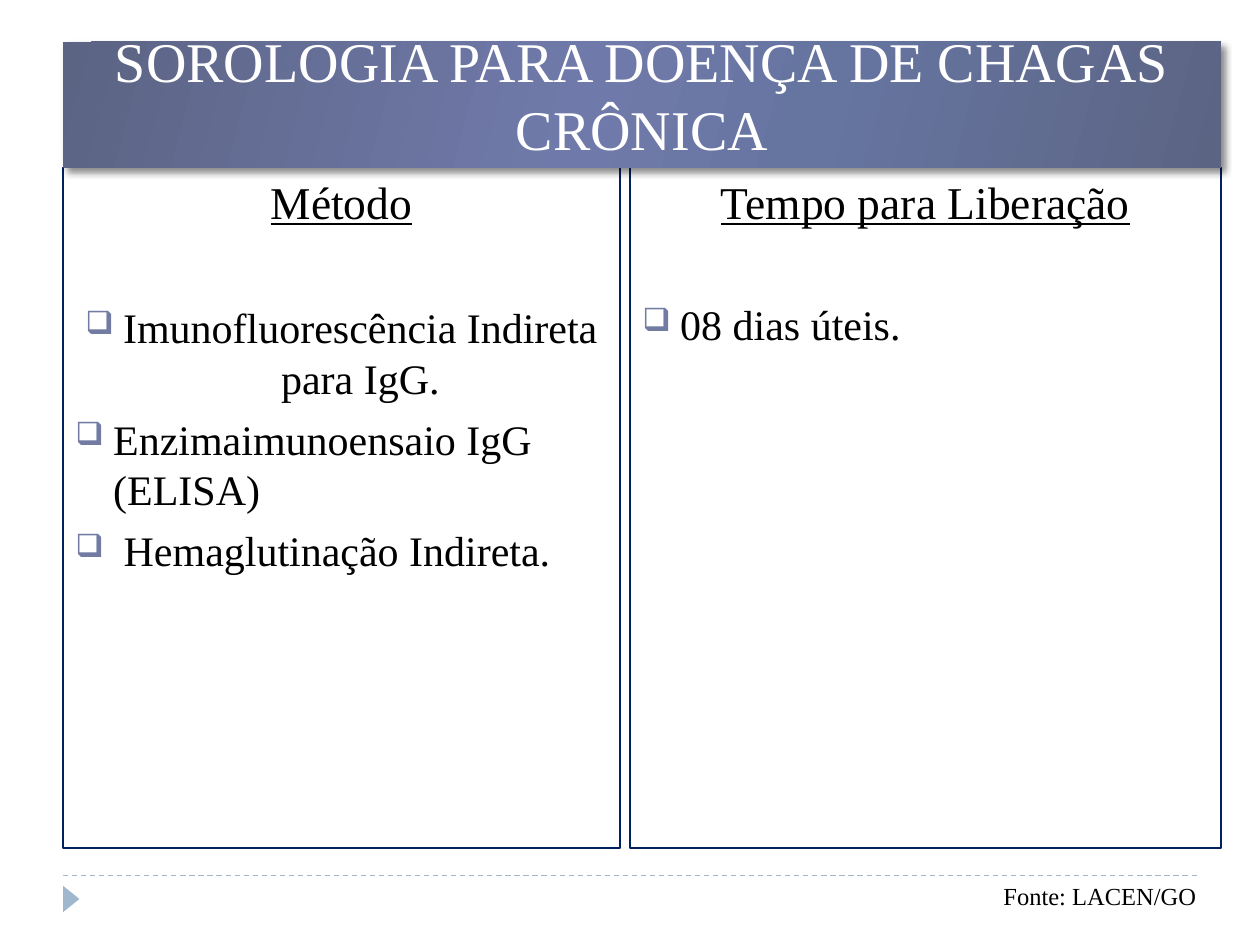
from pptx import Presentation
from pptx.dml.color import RGBColor
from pptx.enum.dml import MSO_LINE
from pptx.enum.shapes import MSO_CONNECTOR, MSO_SHAPE
from pptx.enum.text import MSO_ANCHOR, PP_ALIGN
from pptx.oxml import parse_xml
from pptx.oxml.ns import nsdecls
from pptx.util import Inches, Pt

HUES = {"text": "000000", "white": "FFFFFF", "frame": "002060",
        "mark": "727CA3", "rule": "9FB8CD",
        "edge": "5C6484", "mid": "707AAA", "soft": "6675A0"}
FONT = "Times New Roman"
LEFT, MID, RIGHT = PP_ALIGN.LEFT, PP_ALIGN.CENTER, PP_ALIGN.JUSTIFY


def hue(name):
    return RGBColor.from_string(HUES[name])


def node(xml):
    """Parse one drawing element given as '<a:tag ...'."""
    head, rest = xml.split(" ", 1)
    return parse_xml(f"{head} {nsdecls('a')} {rest}")


def write(para, text, size=24, color="text", align=LEFT, line=False,
          before=0, hang=False, mark=False):
    """Fill a paragraph and format it."""
    props = para._p.get_or_add_pPr()
    if hang:
        props.set("marL", str(Inches(0.3)))
        props.set("indent", str(Inches(-0.3)))
    if mark:
        for xml in (f'<a:buClr ><a:srgbClr val="{HUES["mark"]}"/></a:buClr>',
                    '<a:buSzPct val="76000"/>', '<a:buChar char="❑"/>'):
            props.append(node(xml))
    para.alignment = align
    para.space_before = Pt(before)
    run = para.add_run()
    run.text = text
    font = run.font
    font.name, font.size, font.underline = FONT, Pt(size), line
    font.color.rgb = hue(color)


class Deck:
    """Slide on a grid of 100 columns by 75 rows."""

    def __init__(self):
        self.prs = Presentation()
        self.prs.slide_width, self.prs.slide_height = Inches(10), Inches(7.5)
        self.slide = self.prs.slides.add_slide(self.prs.slide_layouts[6])
        self.shapes = self.slide.shapes

    def grid(self, *cells):
        return [Inches(cell / 10) for cell in cells]

    def shape(self, kind, *cells):
        item = self.shapes.add_shape(kind, *self.grid(*cells))
        item.shadow.inherit = False
        item.fill.background()
        item.line.fill.background()
        return item

    def banner(self, text, *cells):
        item = self.shape(MSO_SHAPE.RECTANGLE, *cells)
        item.fill.gradient()
        item.fill.gradient_angle = 345
        stops = item.fill._fill._gradFill.gsLst
        for stop in list(stops):
            stops.remove(stop)
        for spot, name in ((0, "edge"), (45, "mid"), (65, "soft"), (100, "edge")):
            stops.append(node(f'<a:gs pos="{spot * 1000}">'
                              f'<a:srgbClr val="{HUES[name]}"/></a:gs>'))
        glow = item._element.spPr.find(
            "{http://schemas.openxmlformats.org/drawingml/2006/main}effectLst")
        glow.append(node('<a:outerShdw blurRad="50800" dist="38100" dir="3000000">'
                         '<a:srgbClr val="000000"><a:alpha val="45000"/>'
                         '</a:srgbClr></a:outerShdw>'))
        frame = item.text_frame
        frame.word_wrap, frame.vertical_anchor = True, MSO_ANCHOR.BOTTOM
        write(frame.paragraphs[0], text, size=32, color="white", align=MID)

    def panel(self, head, rows, gap, *cells):
        item = self.shape(MSO_SHAPE.RECTANGLE, *cells)
        item.line.color.rgb, item.line.width = hue("frame"), Pt(0.75)
        frame = item.text_frame
        frame.word_wrap, frame.vertical_anchor = True, MSO_ANCHOR.TOP
        write(frame.paragraphs[0], head, size=26, align=MID, line=True, hang=True)
        for place, (text, align) in enumerate(rows):
            write(frame.add_paragraph(), text, align=align, hang=True,
                  mark=True, before=6 if place else gap)

    def rule(self, *cells):
        item = self.shapes.add_connector(MSO_CONNECTOR.STRAIGHT, *self.grid(*cells))
        item.line.color.rgb, item.line.width = hue("rule"), Pt(0.75)
        item.line.dash_style = MSO_LINE.DASH
        item._element.spPr.append(node("<a:effectLst />"))

    def arrow(self, *cells):
        item = self.shape(MSO_SHAPE.ISOSCELES_TRIANGLE, *cells)
        item.rotation = 90
        item.fill.solid()
        item.fill.fore_color.rgb = hue("rule")

    def note(self, text, *cells):
        frame = self.shapes.add_textbox(*self.grid(*cells)).text_frame
        frame.word_wrap = False
        write(frame.paragraphs[0], text, size=14, align=MID)


def main():
    deck = Deck()
    # Footer marks
    deck.rule(5, 69.5, 95, 69.5)
    deck.arrow(4.6, 70.7, 2.1, 1.3)
    # Two panels under the title
    top, tall = 13.3, 54
    deck.panel("Método", [("Imunofluorescência Indireta para IgG.", MID),
                          ("Enzimaimunoensaio IgG (ELISA)", LEFT),
                          (" Hemaglutinação Indireta.", LEFT)],
               42, 5, top, 44.2, tall)
    deck.panel("Tempo para Liberação", [("08 dias úteis.", RIGHT)],
               40, 50, top, 46.9, tall)
    # Title and source
    deck.banner("SOROLOGIA PARA DOENÇA DE CHAGAS CRÔNICA", 5, 3.3, 91.9, 10)
    deck.note("Fonte: LACEN/GO", 78.6, 69.4, 17.4, 3.4)
    deck.prs.save("out.pptx")


if __name__ == "__main__":
    main()
